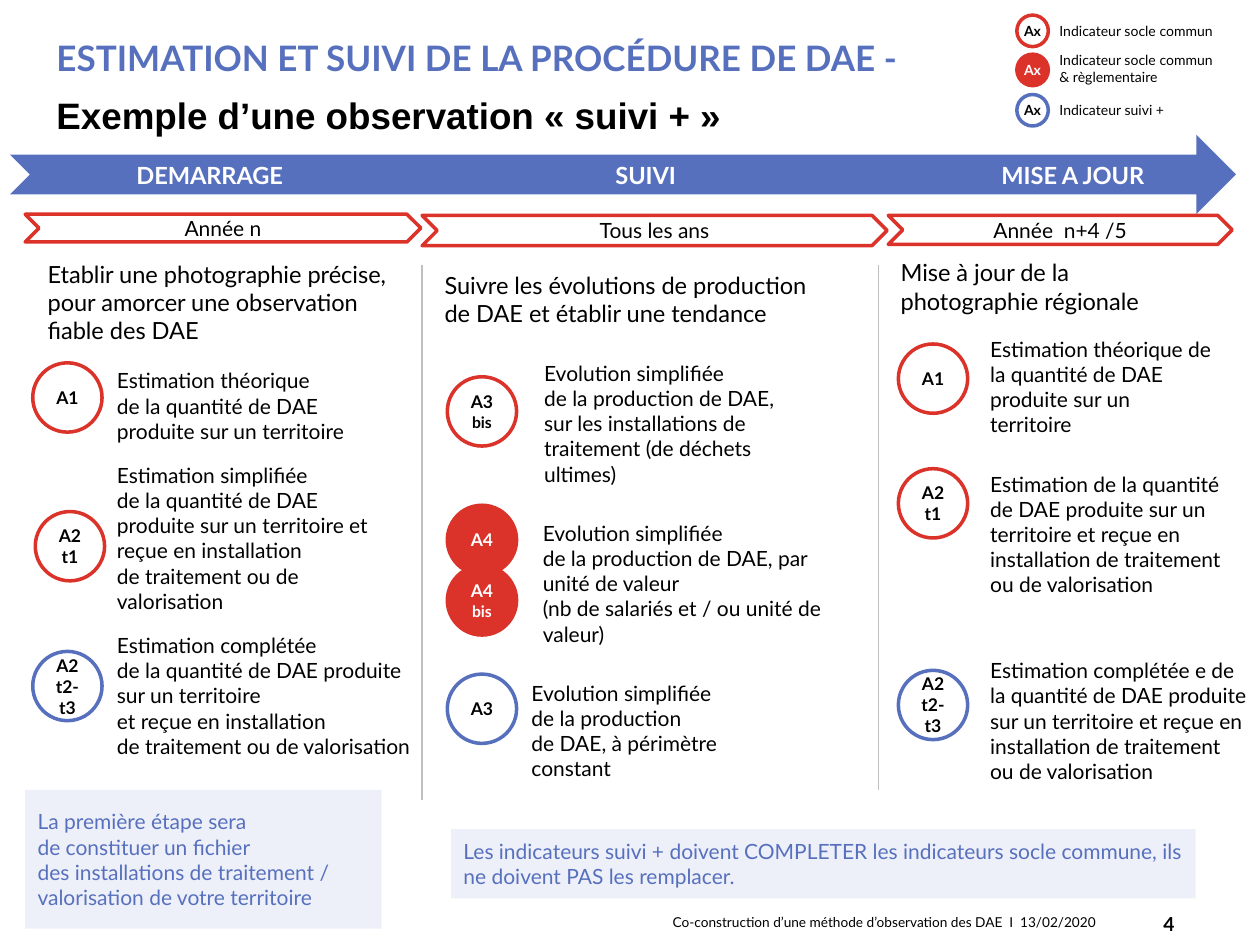
from copy import deepcopy

from lxml import etree
from pptx import Presentation
from pptx.dml.color import RGBColor
from pptx.enum.shapes import MSO_CONNECTOR as Connector, MSO_SHAPE as Shape
from pptx.enum.text import MSO_ANCHOR as Anchor, PP_ALIGN as Align
from pptx.oxml.ns import qn
from pptx.util import Inches, Pt

COLORS = {
    "blue": "5770BE",
    "red": "DB322A",
    "black": "000000",
    "white": "FFFFFF",
    "gray": "BFBFBF",
}
BADGE_SIZE = 0.55
BADGE_STYLES = {
    "common": (None, "red", "black"),
    "white common": ("white", "red", "black"),
    "regulatory": ("red", "red", "white"),
    "extra": (None, "blue", "black"),
}


def rgb(name):
    return RGBColor.from_string(COLORS[name])


def write(shape, spans, size=12, color="black", bold=False, font="Lato",
          align=Align.LEFT, anchor=Anchor.MIDDLE, margin=None, spacing=None):
    frame = shape.text_frame
    formats = {"word_wrap": True, "vertical_anchor": anchor}
    if margin is not None:
        formats.update(dict.fromkeys(
            ("margin_left", "margin_top", "margin_right", "margin_bottom"), Inches(margin)))
    for name, value in formats.items():
        setattr(frame, name, value)
    para = frame.paragraphs[0]
    para.alignment = align
    if spacing:
        para.line_spacing = spacing
    if isinstance(spans, str):
        spans = [(spans, size)]
    for text, points in spans:
        for index, line in enumerate(text.split("\n")):
            if index:
                para.add_line_break()
            span = para.add_run()
            span.text = line
            for name, value in {"size": Pt(points), "bold": bold, "name": font}.items():
                setattr(span.font, name, value)
            span.font.color.rgb = rgb(color)
    for line_break in para._p.findall(qn("a:br")):
        line_break.append(deepcopy(para.runs[0]._r.rPr))


def add_text(page, box, text, **style):
    area = page.shapes.add_textbox(*map(Inches, box))
    write(area, text, **{"anchor": Anchor.TOP, **style})


def add_block(page, kind, box, fill=None, line=None, alpha=None):
    block = page.shapes.add_shape(kind, *map(Inches, box))
    block.shadow.inherit = False
    if fill:
        block.fill.solid()
        block.fill.fore_color.rgb = rgb(fill)
    else:
        block.fill.background()
    if alpha:
        color = block._element.spPr.find(".//" + qn("a:srgbClr"))
        etree.SubElement(color, qn("a:alpha")).set("val", str(alpha * 1000))
    if line:
        block.line.color.rgb = rgb(line)
        block.line.width = Pt(2)
    else:
        block.line.fill.background()
    return block


def add_badge(page, left, top, label, kind, diameter=BADGE_SIZE, size=10, margin=None):
    fill, line, color = BADGE_STYLES[kind]
    badge = add_block(page, Shape.OVAL, (left, top, diameter, diameter), fill, line)
    write(badge, label, size=size, color=color, bold=True, align=Align.CENTER, margin=margin)


def add_header(page, box):
    left, top, width, height = box
    add_text(page, (left, top, width, 0.92), "ESTIMATION ET SUIVI DE LA PROCÉDURE DE DAE -",
             size=20, color="blue", bold=True, anchor=Anchor.MIDDLE)
    add_text(page, (left, top + height - 0.31, width, 0.31),
             "Exemple d’une observation «\u00a0suivi +\u00a0»",
             size=21, bold=True, font="Arial", anchor=Anchor.MIDDLE)


def add_legend(page, box, entries):
    left, top, width, height = box
    for badge_top, text_top, text_width, text_height, text, kind in entries:
        add_badge(page, left, top + badge_top, "Ax", kind, 0.25, 8, 0)
        add_text(page, (left + 0.24, top + text_top, text_width, text_height), text, size=8)


def add_phase_arrow(page, box, phases):
    left, top, width, height = box
    add_block(page, Shape.NOTCHED_RIGHT_ARROW, box, "blue")
    for offset, label_width, label in phases:
        add_text(page, (left + offset, top + 0.16, label_width, 0.33), label,
                 size=13.5, color="white", bold=True, align=Align.CENTER)


def add_column(page, box, period, heading, badges, texts):
    left, top, width, height = box
    chevron = add_block(page, Shape.CHEVRON, box, "white", "red")
    write(chevron, period, align=Align.CENTER)
    for (x, y, w, h, text), size in [(heading, 13.5)] + [(item, 12) for item in texts]:
        add_text(page, (left + x, top + y, w, h), text, size=size)
    for x, y, label, kind in badges:
        add_badge(page, left + x, top + y, label, kind)


def add_divider(page, left, top, bottom):
    line = page.shapes.add_connector(Connector.STRAIGHT, *map(Inches, (left, top, left, bottom)))
    line.line.color.rgb = rgb("gray")
    line.line.width = Pt(0.75)
    etree.SubElement(line._element.spPr, qn("a:effectLst"))


def add_note(page, box, text):
    note = add_block(page, Shape.RECTANGLE, box, "blue", alpha=10)
    write(note, text, color="blue")


def add_footer(page, box):
    left, top, width, height = box
    add_text(page, (left, top + 0.05, width, 0.3),
             "Co-construction d’une méthode d’observation des DAE  I  13/02/2020",
             size=7.8, anchor=Anchor.MIDDLE, spacing=0.8)
    add_text(page, (left + 3.62, top, 0.56, height), "4",
             size=11, bold=True, align=Align.RIGHT, anchor=Anchor.MIDDLE)


def main():
    deck = Presentation()
    deck.slide_width, deck.slide_height = Inches(10), Inches(7.5)
    page = deck.slides.add_slide(deck.slide_layouts[6])

    add_footer(page, (5.24, 7.13, 4.32, 0.4))
    add_header(page, (0.35, 0, 7.8, 1.07))
    add_phase_arrow(page, (0.08, 1.07, 9.73, 0.63), [
        (0.12, 2.93, "DEMARRAGE"),
        (3.58, 2.93, "SUIVI"),
        (7.27, 2.33, "MISE A JOUR"),
    ])
    add_column(
        page, (0.2, 1.7, 3.14, 0.22), "Année n",
        (0.08, 0.31, 2.91, 0.78,
         "Etablir une photographie précise, pour amorcer une observation fiable des DAE"),
        [(0.06, 1.18, "A1", "common"),
         (0.08, 2.36, "A2t1", "common"),
         (0.06, 3.47, "A2 t2-t3", "extra")],
        [(0.63, 1.17, 2.33, 0.71,
          "Estimation théorique \nde la quantité de DAE produite sur un territoire"),
         (0.63, 1.92, 2.36, 1.31,
          "Estimation simplifiée \nde la quantité de DAE produite sur un territoire et reçue "
          "en installation \nde traitement ou de valorisation"),
         (0.63, 3.27, 2.6, 1.31,
          "Estimation complétée \nde la quantité de DAE produite sur un territoire \n"
          "et reçue en installation \nde traitement ou de valorisation")])
    add_column(
        page, (3.35, 1.71, 3.69, 0.24), "Tous les ans",
        (0.08, 0.39, 3.71, 0.56,
         "Suivre les évolutions de production \nde DAE et établir une tendance"),
        [(0.2, 1.28, [("A3 ", 10), ("bis", 9)], "white common"),
         (0.2, 2.3, "A4", "regulatory"),
         (0.2, 2.78, [("A4 ", 10), ("bis", 9)], "regulatory"),
         (0.2, 3.64, "A3", "extra")],
        [(0.87, 1.1, 2.28, 1.11,
          "Evolution simplifiée \nde la production de DAE, sur les installations de "
          "traitement (de déchets ultimes)"),
         (0.86, 2.37, 2.53, 1.11,
          "Evolution simplifiée \nde la production de DAE, par unité de valeur \n"
          "(nb de salariés et / ou unité de valeur)"),
         (0.77, 3.64, 2.23, 0.91,
          "Evolution simplifiée \nde la production \nde DAE, à périmètre constant")])
    add_column(
        page, (7.05, 1.71, 2.73, 0.23), "Année  n+4 /5",
        (0, 0.29, 2.43, 0.56, "Mise à jour de la photographie régionale"),
        [(0.08, 1.02, "A1", "common"),
         (0.08, 2.01, "A2t1", "common"),
         (0.08, 3.61, "A2 t2-t3", "extra")],
        [(0.71, 0.91, 1.96, 0.91,
          "Estimation théorique de la quantité de DAE produite sur un territoire"),
         (0.71, 1.98, 2.22, 1.31,
          "Estimation de la quantité de DAE produite sur un territoire et reçue en "
          "installation de traitement ou de valorisation"),
         (0.71, 3.46, 2.24, 1.31,
          "Estimation complétée e de la quantité de DAE produite sur un territoire et "
          "reçue en installation de traitement ou de valorisation")])
    add_divider(page, 3.35, 2.1, 6.35)
    add_divider(page, 6.97, 2.1, 6.27)
    add_note(page, (0.2, 6.27, 2.83, 1.1),
             "La première étape sera \nde constituer un fichier \n"
             "des installations de traitement / valorisation de votre territoire")
    add_note(page, (3.58, 6.58, 5.91, 0.55),
             "Les indicateurs suivi + doivent COMPLETER les indicateurs socle commune, "
             "ils ne doivent PAS les remplacer.")
    add_legend(page, (8.07, 0.12, 1.93, 0.88), [
        (0, 0.01, 1.73, 0.24, "Indicateur socle commun", "common"),
        (0.31, 0.24, 2.6, 0.37, "Indicateur socle commun \n& règlementaire", "regulatory"),
        (0.63, 0.64, 1.18, 0.24, "Indicateur suivi +", "extra"),
    ])
    deck.save("out.pptx")


if __name__ == "__main__":
    main()
